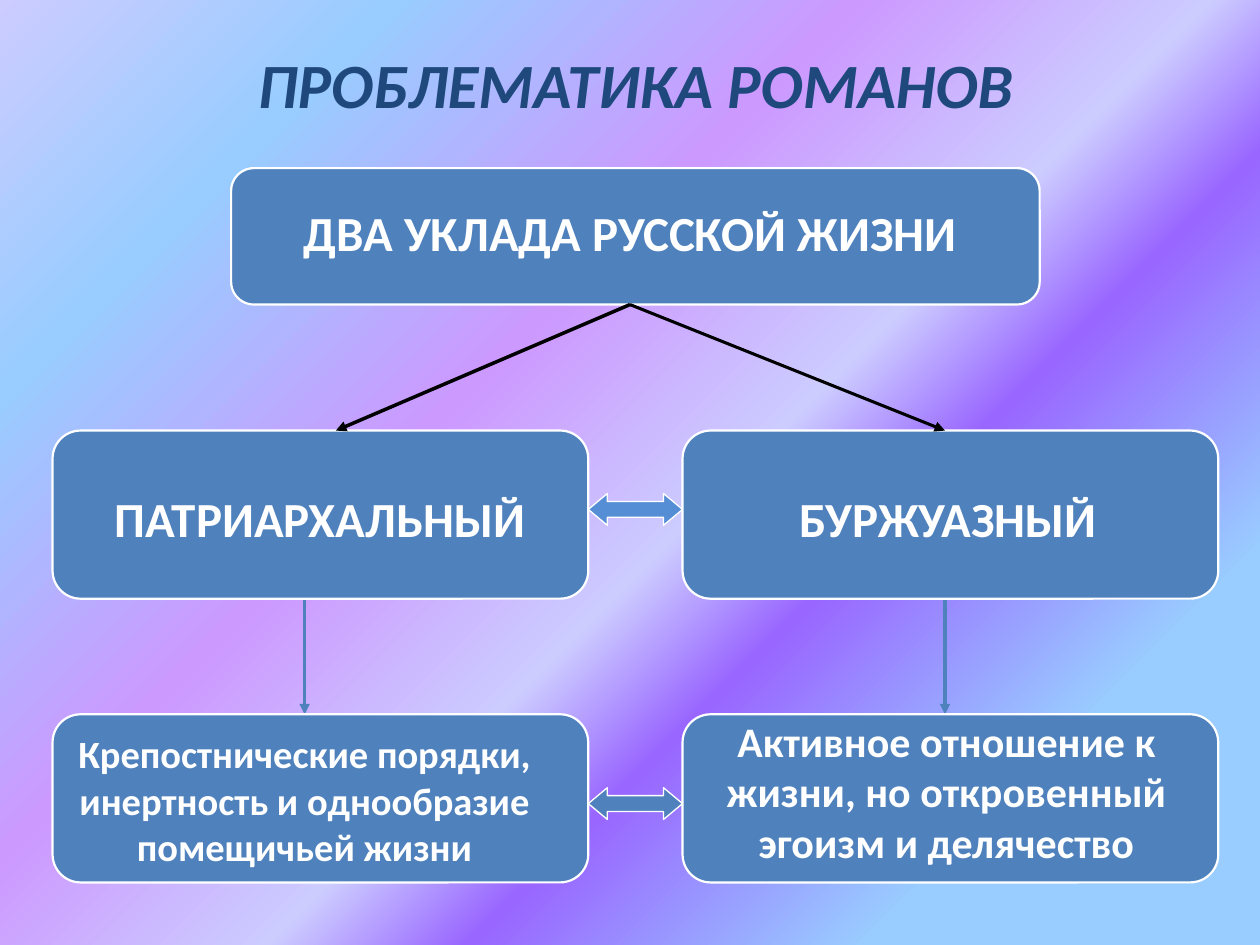
from lxml.etree import SubElement
from pptx import Presentation
from pptx.dml.color import RGBColor
from pptx.enum.shapes import MSO_CONNECTOR, MSO_SHAPE
from pptx.enum.text import MSO_AUTO_SIZE, PP_ALIGN
from pptx.oxml import parse_xml
from pptx.oxml.ns import nsdecls, qn
from pptx.util import Cm, Pt

NAVY = RGBColor(0x1F, 0x49, 0x7D)
BLUE = RGBColor(0x4F, 0x81, 0xBD)
LIGHT_BLUE = RGBColor(0x55, 0x8E, 0xD5)
WHITE = RGBColor(0xFF, 0xFF, 0xFF)
BLACK = RGBColor(0, 0, 0)
FONT = "Calibri"

BACKGROUND = [(18, "99CCFF"), (36, "9966FF"), (45, "CCCCFF"),
              (61, "CC99FF"), (82, "99CCFF"), (100, "CCCCFF")]

# text, (left, top, width, height) in cm, format
TITLE = ("ПРОБЛЕМАТИКА РОМАНОВ", (4.95, 0.79, 16.89, 1.8),
         dict(size=36, color=NAVY, italic=True, align=PP_ALIGN.LEFT))
LABELS = [
    ("ДВА УКЛАДА РУССКОЙ ЖИЗНИ", (5.36, 3.96, 14.68, 1.45), dict(size=28)),
    ("ПАТРИАРХАЛЬНЫЙ", (1.27, 9.73, 10.36, 1.45), dict(size=28)),
    ("БУРЖУАЗНЫЙ", (13.89, 9.73, 10.44, 1.45), dict(size=28)),
    ("Крепостнические порядки, инертность и однообразие помещичьей жизни",
     (1.06, 14.6, 10.16, 3.07), dict(size=22)),
    ("Активное отношение к жизни, но откровенный эгоизм и делячество",
     (13.76, 14.3, 10.64, 3.33), dict(size=24)),
]

# Diagram grid, cm
HEADING = (4.66, 3.39, 16.3, 2.75)
HEADING_BOTTOM = HEADING[1] + HEADING[3]
COLUMNS = (1.06, 13.76)
ROWS = (8.68, 14.4)
BOX_W, BOX_H = 10.8, 3.39
BRANCH_X = 12.7
BRANCHES = [(6.77, 2), (19.05, 1.75)]  # end x, line width
DROPS = (6.14, 19.05)
LINKS = [(9.95, LIGHT_BLUE), (15.88, BLUE)]  # top, fill
LINK_H = 0.64


def set_background(s, stops):
    """Gradient spreading from the bottom right corner."""
    gs = "".join(f'<a:gs pos="{pos * 1000}"><a:srgbClr val="{color}"/></a:gs>'
                 for pos, color in stops)
    bg = parse_xml(
        f'<p:bg {nsdecls("p", "a")}><p:bgPr><a:gradFill><a:gsLst>{gs}</a:gsLst>'
        '<a:path path="circle"><a:fillToRect l="100000" t="100000"/></a:path>'
        '</a:gradFill><a:effectLst/></p:bgPr></p:bg>')
    s.element.cSld.insert(0, bg)


def add_text(s, text, place, size, color=WHITE, italic=False,
             align=PP_ALIGN.CENTER):
    tf = s.shapes.add_textbox(*map(Cm, place)).text_frame
    tf.word_wrap = True
    tf.auto_size = MSO_AUTO_SIZE.SHAPE_TO_FIT_TEXT
    p = tf.paragraphs[0]
    p.alignment = align
    r = p.add_run()
    r.text = text
    r.font.name, r.font.size = FONT, Pt(size)
    r.font.bold, r.font.italic = True, italic
    r.font.color.rgb = color


def add_block(s, kind, place, fill, line_width, adjustments):
    sp = s.shapes.add_shape(kind, *map(Cm, place))
    sp.shadow.inherit = False
    for i, value in enumerate(adjustments):
        sp.adjustments[i] = value
    sp.fill.solid()
    sp.fill.fore_color.rgb = fill
    sp.line.color.rgb = WHITE
    sp.line.width = Pt(line_width)


def add_box(s, place):
    add_block(s, MSO_SHAPE.ROUNDED_RECTANGLE, place, BLUE, 1.25, [0.167])


def add_arrow(s, start, end, color, width):
    c = s.shapes.add_connector(MSO_CONNECTOR.STRAIGHT, *map(Cm, start + end))
    c.line.color.rgb = color
    c.line.width = Pt(width)
    SubElement(c.line._get_or_add_ln(), qn("a:tailEnd"), type="triangle")
    SubElement(c._element.spPr, qn("a:effectLst"))


def main():
    prs = Presentation()
    prs.slide_width, prs.slide_height = Cm(25.4), Cm(19.05)
    s = prs.slides.add_slide(prs.slide_layouts[6])
    set_background(s, BACKGROUND)

    text, place, style = TITLE
    add_text(s, text, place, **style)

    for x in DROPS:
        add_arrow(s, (x, ROWS[0] + BOX_H), (x, ROWS[1]), BLUE, 2)
    add_box(s, HEADING)
    for y in ROWS:
        for x in COLUMNS:
            add_box(s, (x, y, BOX_W, BOX_H))
    for x, width in BRANCHES:
        add_arrow(s, (BRANCH_X, HEADING_BOTTOM), (x, ROWS[0]), BLACK, width)

    for text, place, style in LABELS:
        add_text(s, text, place, **style)

    link_x = COLUMNS[0] + BOX_W
    for y, fill in LINKS:
        add_block(s, MSO_SHAPE.LEFT_RIGHT_ARROW,
                  (link_x, y, COLUMNS[1] - link_x, LINK_H), fill, 0.75, [0.5, 0.6])

    prs.save("out.pptx")


if __name__ == "__main__":
    main()
